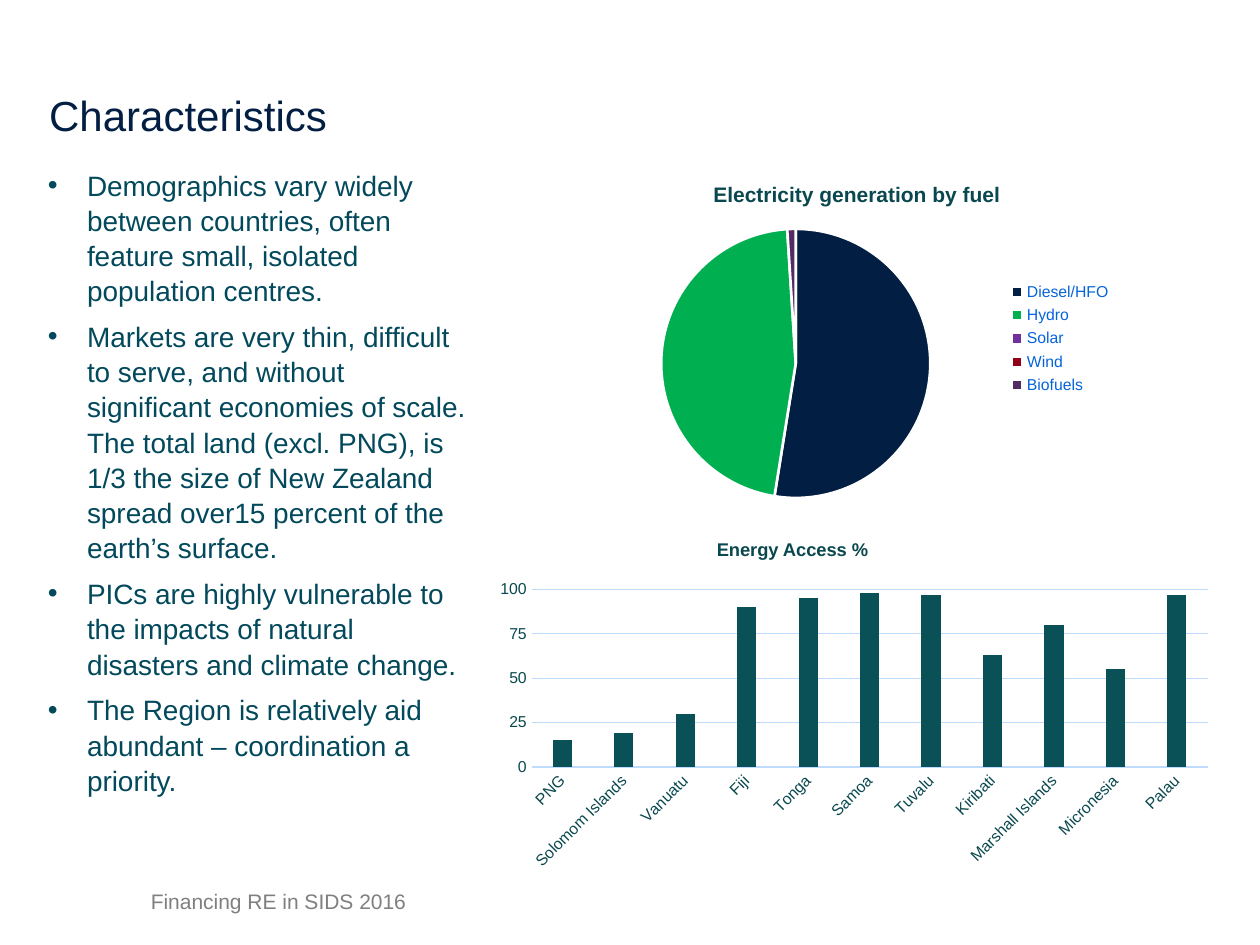
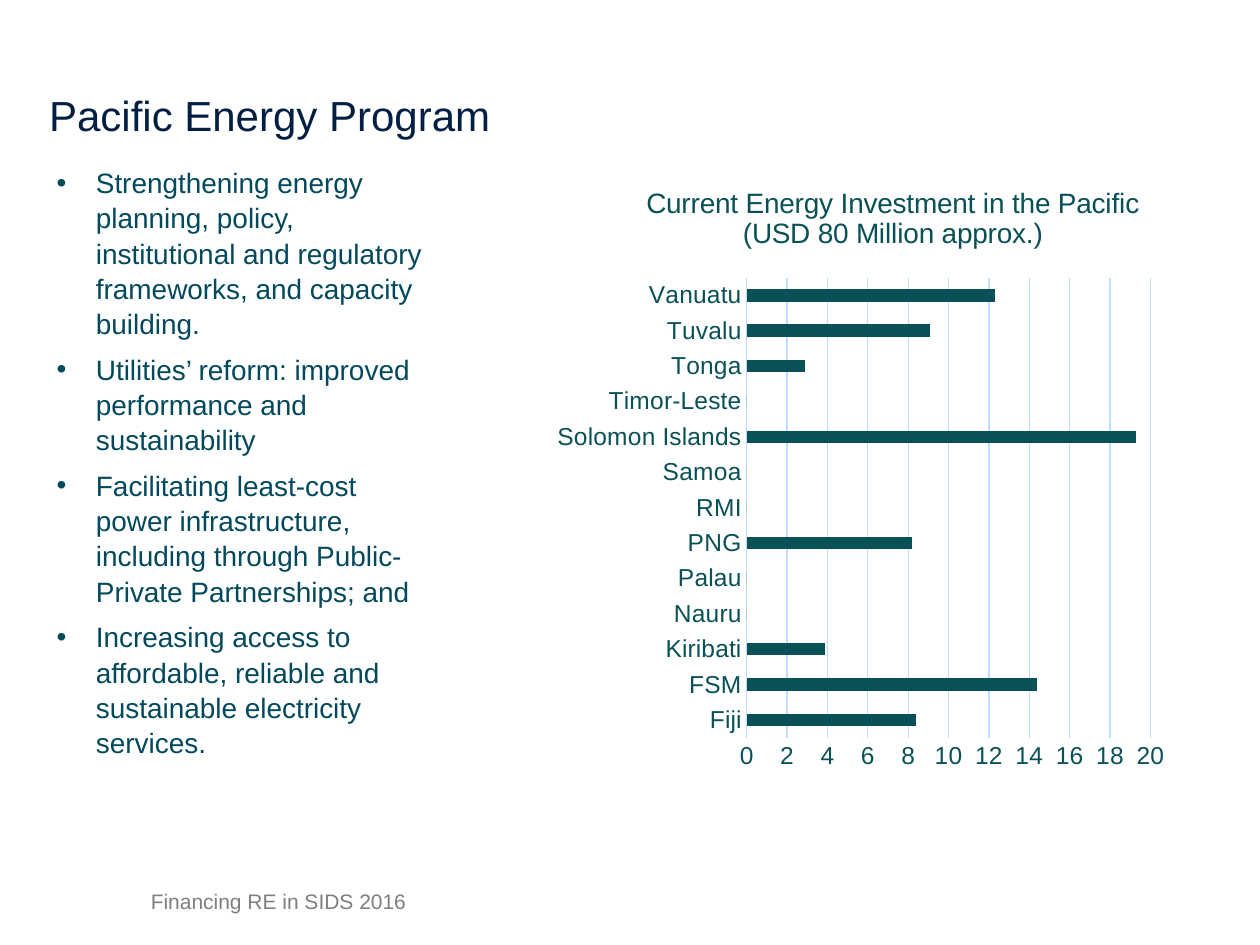
from lxml import etree
from pptx import Presentation
from pptx.chart.data import CategoryChartData
from pptx.dml.color import RGBColor
from pptx.enum.chart import XL_CHART_TYPE, XL_LEGEND_POSITION, XL_TICK_MARK
from pptx.enum.text import MSO_ANCHOR, MSO_AUTO_SIZE, PP_ALIGN
from pptx.oxml.ns import qn
from pptx.util import Cm, Pt

PIE, COLUMN, BAR = (XL_CHART_TYPE.PIE, XL_CHART_TYPE.COLUMN_CLUSTERED,
                    XL_CHART_TYPE.BAR_CLUSTERED)
RIGHT, NO_TICK = XL_LEGEND_POSITION.RIGHT, XL_TICK_MARK.NONE
TOP, MIDDLE, BOTTOM = MSO_ANCHOR.TOP, MSO_ANCHOR.MIDDLE, MSO_ANCHOR.BOTTOM
LEFT = PP_ALIGN.LEFT
FIXED, GROW = MSO_AUTO_SIZE.NONE, MSO_AUTO_SIZE.SHAPE_TO_FIT_TEXT

FONT = "Arial"
COLORS = {
    "navy": "021F43", "body": "03495C", "teal": "0A5157", "label": "09484E",
    "gray": "7F7F7F", "grid": "BFDBFD", "link": "0664D9", "white": "FFFFFF",
    "green": "00B050", "purple": "7030A0", "red": "920016", "plum": "532C63",
}
TITLE_BOX = (0.99, 0.86, 23.37, 1.96)
FOOT_BOX = (2.79, 17.65, 15.85, 1.02)
INDENT = Cm(0.79)

FUELS = {"Diesel/HFO": (52, "navy"), "Hydro": (46, "green"), "Solar": (0, "purple"),
         "Wind": (0, "red"), "Biofuels": (1, "plum")}
ACCESS = {"PNG": 15, "Solomom Islands": 19, "Vanuatu": 30, "Fiji": 90, "Tonga": 95,
          "Samoa": 98, "Tuvalu": 97, "Kiribati": 63, "Marshall Islands": 80,
          "Micronesia": 55, "Palau": 97}
INVEST = {"Fiji": 8.4, "FSM": 14.4, "Kiribati": 3.9, "Nauru": 0, "Palau": 0,
          "PNG": 8.2, "RMI": 0, "Samoa": 0, "Solomon Islands": 19.3,
          "Timor-Leste": 0, "Tonga": 2.9, "Tuvalu": 9.1, "Vanuatu": 12.3}
TRAITS = [
    "Demographics vary widely between countries, often feature small, isolated "
    "population centres.",
    "Markets are very thin, difficult to serve, and without significant economies "
    "of scale. The total land (excl. PNG), is 1/3 the size of New Zealand spread "
    "over15 percent of the earth’s surface.",
    "PICs are highly vulnerable to the impacts of natural disasters and climate change.",
    "The Region is relatively aid abundant – coordination a priority.",
]
GOALS = [
    "Strengthening energy planning, policy, institutional and regulatory frameworks, "
    "and capacity building.",
    "Utilities’ reform: improved performance and sustainability",
    "Facilitating least-cost power infrastructure, including through Public-Private "
    "Partnerships; and",
    "Increasing access to affordable, reliable and sustainable electricity services.",
]


def rgb(name):
    return RGBColor.from_string(COLORS[name])


def assign(item, **values):
    for key, value in values.items():
        setattr(item, key, value)


def style(font, size, color, bold=False):
    assign(font, name=FONT, size=Pt(size), bold=bold)
    font.color.rgb = rgb(color)


def place(shape, box):
    assign(shape, **dict(zip(("left", "top", "width", "height"), map(Cm, box))))


def write(para, text, size, color, bold=False):
    run = para.add_run()
    run.text = text
    style(run.font, size, color, bold)


def add_label(slide, box, text, size, color, bold=False, **frame):
    shape = slide.shapes.add_textbox(*map(Cm, box))
    assign(shape.text_frame, **frame)
    write(shape.text_frame.paragraphs[0], text, size, color, bold)


def add_page(deck, title):
    slide = deck.slides.add_slide(deck.slide_layouts[1])
    head = slide.shapes.title
    place(head, TITLE_BOX)
    assign(head.text_frame, vertical_anchor=BOTTOM, auto_size=FIXED, margin_left=0,
           margin_top=0, margin_right=0, margin_bottom=0)
    para = head.text_frame.paragraphs[0]
    para.alignment = LEFT
    write(para, title, 24, "navy")
    add_label(slide, FOOT_BOX, "Financing RE in SIDS 2016", 12, "gray",
              word_wrap=True, vertical_anchor=MIDDLE)
    return slide


def fill_list(slide, box, items):
    body = slide.placeholders[1]
    place(body, box)
    frame = body.text_frame
    assign(frame, word_wrap=True, auto_size=GROW, vertical_anchor=TOP)
    for i, item in enumerate(items):
        para = frame.add_paragraph() if i else frame.paragraphs[0]
        props = para._p.get_or_add_pPr()
        props.set("marL", str(INDENT))
        props.set("indent", str(-INDENT))
        etree.SubElement(props, qn("a:buChar")).set("char", "•")
        assign(para, alignment=LEFT, line_spacing=1.05,
               space_before=Pt(6 if i else 0))
        write(para, item, 16, "body")


def set_layout(parent, index, inner=False, **spots):
    """Fix a chart part at fractions of the chart's size."""
    for old in parent.findall(qn("c:layout")):
        parent.remove(old)
    layout = etree.Element(qn("c:layout"))
    manual = etree.SubElement(layout, qn("c:manualLayout"))
    modes = {"xMode": "edge", "yMode": "edge"}
    if inner:
        modes = {"layoutTarget": "inner", **modes}
    for tag, value in {**modes, **spots}.items():
        etree.SubElement(manual, qn("c:" + tag)).set("val", str(value))
    parent.insert(index, layout)


def add_chart(slide, kind, box, cats, values, plot):
    data = CategoryChartData()
    data.categories = cats
    data.add_series("Series 1", values)
    chart = slide.shapes.add_chart(kind, *map(Cm, box), data).chart
    chart.has_title = chart.has_legend = False
    style(chart.font, 10, "navy")
    set_layout(chart._chartSpace.chart.plotArea, 0, True, **dict(zip("xywh", plot)))
    return chart


def head_chart(chart, lines, spot, *look):
    chart.has_title = True
    frame = chart.chart_title.text_frame
    for i, line in enumerate(lines):
        para = frame.add_paragraph() if i else frame.paragraphs[0]
        write(para, line, *look)
    title = chart._chartSpace.chart.find(qn("c:title"))
    set_layout(title, 1, **dict(zip("xy", spot)))


def add_bars(slide, kind, box, table, plot, top, step, gap, lap, size, color):
    chart = add_chart(slide, kind, box, table.keys(), table.values(), plot)
    bars = chart.plots[0]
    assign(bars, gap_width=gap, overlap=lap, vary_by_categories=False)
    fill = bars.series[0].format.fill
    fill.solid()
    fill.fore_color.rgb = rgb("teal")
    cats, vals = chart.category_axis, chart.value_axis
    assign(vals, minimum_scale=0, maximum_scale=top, major_unit=step,
           has_major_gridlines=True)
    for axis in (cats, vals):
        assign(axis, major_tick_mark=NO_TICK, minor_tick_mark=NO_TICK)
        style(axis.tick_labels.font, size, color)
    for line in (cats.format.line, vals.major_gridlines.format.line):
        line.color.rgb = rgb("grid")
        line.width = Pt(0.75)
    vals.format.line.fill.background()
    return chart


def add_fuels(slide, box):
    values, hues = zip(*FUELS.values())
    chart = add_chart(slide, PIE, box, FUELS.keys(), values, (0.14, 0.19, 0.5, 0.76))
    head_chart(chart, ["Electricity generation by fuel"], (0.23, 0.05),
               12, "label", True)
    chart.has_legend = True
    assign(chart.legend, position=RIGHT, include_in_layout=False)
    style(chart.legend.font, 9, "link")
    for i, hue in enumerate(hues):
        part = chart.plots[0].series[0].points[i].format
        part.fill.solid()
        part.fill.fore_color.rgb = rgb(hue)
        part.line.color.rgb = rgb("white")
        part.line.width = Pt(1.5)


def add_access(slide, box):
    left, top, *_ = box
    add_label(slide, (left + 4.37, top - 0.86, 3.63, 0.71), "Energy Access %",
              10.5, "label", True, word_wrap=False, auto_size=GROW)
    chart = add_bars(slide, COLUMN, box, ACCESS, (0.06, 0.05, 0.92, 0.59),
                     100, 25, 219, -27, 9, "label")
    texts = chart.category_axis._element.find(qn("c:txPr"))
    texts.find(qn("a:bodyPr")).set("rot", str(-45 * 60000))


def add_invest(slide, box):
    chart = add_bars(slide, BAR, box, INVEST, (0.33, 0.19, 0.62, 0.72),
                     20, 2, 182, 0, 14, "teal")
    head_chart(chart, ["Current Energy Investment in the Pacific",
                       "(USD 80 Million approx.)"], (0.17, 0.04), 16, "teal")


def main():
    deck = Presentation()
    assign(deck, slide_width=Cm(25.4), slide_height=Cm(19.05))
    slide = add_page(deck, "Characteristics")
    fill_list(slide, (0.71, 3.23, 9.02, 12.52), TRAITS)
    add_fuels(slide, (11.81, 3.23, 10.85, 7.19))
    add_access(slide, (9.83, 11.58, 14.81, 6.07))
    slide = add_page(deck, "Pacific Energy Program")
    fill_list(slide, (0.89, 3.18, 7.95, 11.84), GOALS)
    add_invest(slide, (10.72, 3.15, 13.13, 12.88))
    deck.save("out.pptx")


if __name__ == "__main__":
    main()
